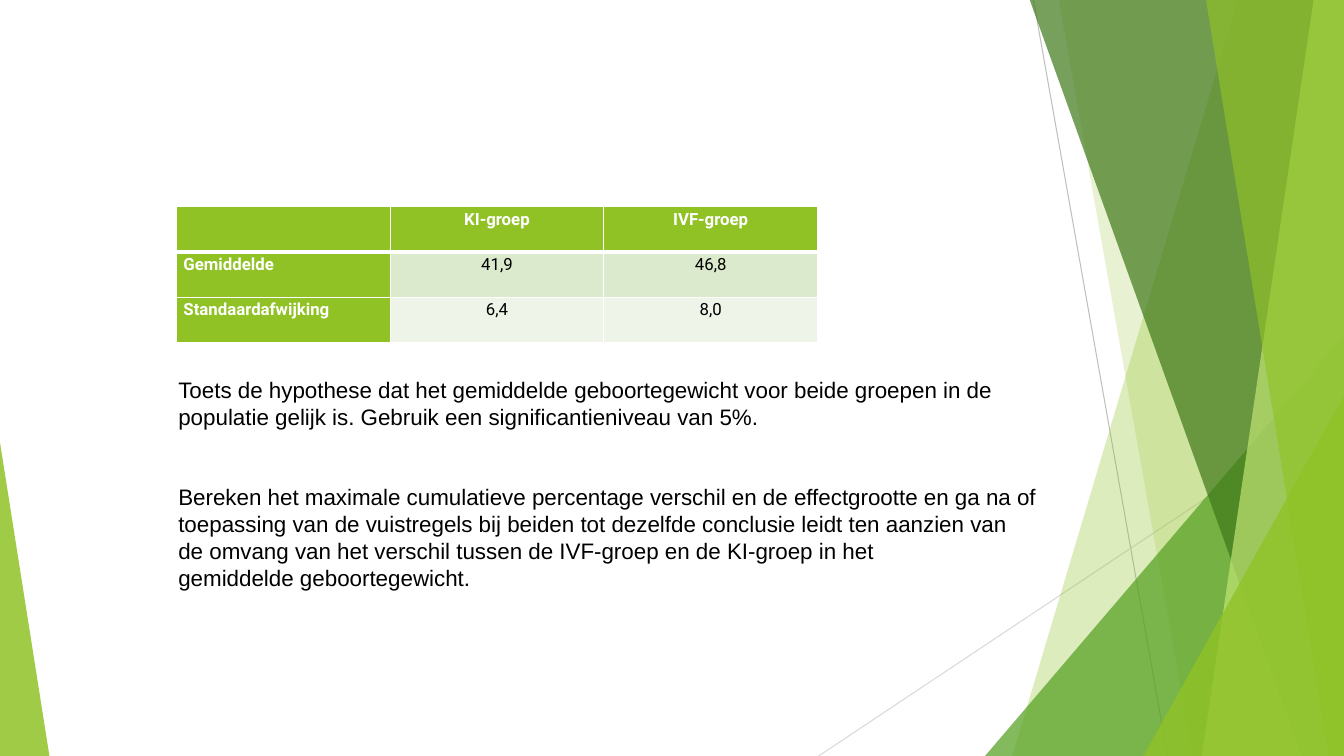
from dataclasses import dataclass

from lxml.etree import SubElement
from pptx import Presentation
from pptx.dml.color import RGBColor
from pptx.enum.shapes import MSO_CONNECTOR, MSO_SHAPE
from pptx.enum.text import MSO_ANCHOR, MSO_AUTO_SIZE, PP_ALIGN
from pptx.oxml.ns import qn
from pptx.util import Inches, Pt

WIDTH, HEIGHT = 13.33, 7.5


@dataclass(frozen=True)
class Theme:
    lime: str = "90C226"
    green: str = "54A021"
    forest: str = "3F7819"
    pale_lime: str = "C0E474"
    band_dark: str = "DBE9CD"
    band_light: str = "EEF4E8"
    line_dark: str = "BFBFBF"
    line_light: str = "D9D9D9"
    white: str = "FFFFFF"
    black: str = "000000"
    body_font: str = "Arial"
    table_font: str = "Roboto"
    body_size: int = 16
    table_size: int = 12


class SlideBuilder:
    def __init__(self, slide, theme):
        self.s = slide
        self.theme = theme

    def paint(self, sp, color, opacity):
        sp.shadow.inherit = False
        sp.line.fill.background()
        sp.fill.solid()
        sp.fill.fore_color.rgb = RGBColor.from_string(color)
        clr = sp.fill._xPr.find(qn("a:solidFill"))[0]
        SubElement(clr, qn("a:alpha"), val=str(opacity * 1000))

    def line(self, start, end, color):
        points = [Inches(v) for v in (*start, *end)]
        cx = self.s.shapes.add_connector(MSO_CONNECTOR.STRAIGHT, *points)
        cx.line.color.rgb = RGBColor.from_string(color)
        cx.line.width = Pt(0.75)
        SubElement(cx._element.spPr, qn("a:effectLst"))

    def veil(self, top_x, bottom_x, color, opacity):
        """Full-height band from a slanted left edge to the slide's right edge."""
        top = -0.01
        corners = [(WIDTH, top), (WIDTH, HEIGHT), (bottom_x, HEIGHT)]
        fb = self.s.shapes.build_freeform(Inches(top_x), Inches(top))
        fb.add_line_segments([(Inches(x), Inches(y)) for x, y in corners])
        self.paint(fb.convert_to_shape(), color, opacity)

    def triangle(self, left, top, width, apex, color, opacity):
        """Triangle that stands on the slide's bottom edge."""
        box = [Inches(v) for v in (left, top, width, HEIGHT - top)]
        sp = self.s.shapes.add_shape(MSO_SHAPE.ISOSCELES_TRIANGLE, *box)
        sp.adjustments[0] = apex
        self.paint(sp, color, opacity)

    def style(self, p, font, size, color, bold=False):
        for r in p.runs:
            r.font.name = font
            r.font.size = Pt(size)
            r.font.bold = bold
            r.font.color.rgb = RGBColor.from_string(color)

    def text(self, left, top, width, height, lines, anchor=MSO_ANCHOR.TOP):
        box = [Inches(v) for v in (left, top, width, height)]
        tf = self.s.shapes.add_textbox(*box).text_frame
        tf.word_wrap = True
        tf.auto_size = MSO_AUTO_SIZE.SHAPE_TO_FIT_TEXT
        tf.vertical_anchor = anchor
        tf.text = "\n".join(lines)
        for p in tf.paragraphs:
            self.style(p, self.theme.body_font, self.theme.body_size, self.theme.black)

    def borders(self, cell, widths):
        tc_pr = cell._tc.get_or_add_tcPr()
        for side, width in widths.items():
            ln = SubElement(tc_pr, qn(f"a:ln{side}"), w=str(Pt(width)))
            fill = SubElement(ln, qn("a:solidFill"))
            SubElement(fill, qn("a:srgbClr"), val=self.theme.white)

    def table(self, left, top, col_width, row_height, rows):
        t = self.theme
        n_rows, n_cols = len(rows), len(rows[0])
        table = self.s.shapes.add_table(
            n_rows, n_cols, Inches(left), Inches(top),
            Inches(col_width * n_cols), Inches(row_height * n_rows)).table
        for i, row in enumerate(rows):
            for j, value in enumerate(row):
                cell = table.cell(i, j)
                heading = i == 0 or j == 0
                # A thick rule separates the header from the body
                self.borders(cell, {"L": 1, "R": 1, "T": 3 if i == 1 else 1,
                                    "B": 3 if i == 0 else 1})
                band = t.band_dark if i % 2 else t.band_light
                cell.fill.solid()
                cell.fill.fore_color.rgb = RGBColor.from_string(t.lime if heading else band)
                cell.margin_left = cell.margin_right = Inches(0.07)
                cell.margin_top = cell.margin_bottom = 0
                p = cell.text_frame.paragraphs[0]
                p.text = value
                p.line_spacing = 1.15
                p.alignment = PP_ALIGN.CENTER if j else PP_ALIGN.LEFT
                self.style(p, t.table_font, t.table_size,
                           t.white if heading else t.black, heading)


def main():
    prs = Presentation()
    prs.slide_width, prs.slide_height = Inches(WIDTH), Inches(HEIGHT)
    theme = Theme()
    slide = SlideBuilder(prs.slides.add_slide(prs.slide_layouts[6]), theme)

    # Thin lines behind the facets
    slide.line((10.25, 0), (11.58, HEIGHT), theme.line_dark)
    slide.line((WIDTH, 4.03), (8.12, HEIGHT), theme.line_light)

    # Green facets
    slide.veil(12.28, 10.04, theme.lime, 30)
    slide.veil(10.5, 11.83, theme.lime, 20)
    slide.triangle(9.77, 3.33, 3.56, 1, theme.green, 72)
    slide.veil(10.21, 12.91, theme.forest, 70)
    slide.veil(13.03, 11.92, theme.pale_lime, 70)
    slide.veil(11.96, 13.18, theme.lime, 65)
    slide.triangle(11.34, 3.93, 1.99, 1, theme.lime, 80)
    slide.triangle(0, 4.39, 0.49, 0, theme.lime, 85)

    # Group statistics
    slide.table(1.75, 2.05, 2.12, 0.45, [
        ["", "KI-groep", "IVF-groep"],
        ["Gemiddelde", "41,9", "46,8"],
        ["Standaardafwijking", "6,4", "8,0"],
    ])

    # Assignments
    slide.text(1.67, 4.74, 9.95, 1.18, [
        "Bereken het maximale cumulatieve percentage verschil en de effectgrootte en ga na of",
        "toepassing van de vuistregels bij beiden tot dezelfde conclusie leidt ten aanzien van",
        "de omvang van het verschil tussen de IVF-groep en de KI-groep in het",
        "gemiddelde geboortegewicht.",
    ], MSO_ANCHOR.MIDDLE)
    slide.text(1.67, 3.68, 9.95, 0.94, [
        "Toets de hypothese dat het gemiddelde geboortegewicht voor beide groepen in de",
        "populatie gelijk is. Gebruik een significantieniveau van 5%.",
    ])

    prs.save("out.pptx")


if __name__ == "__main__":
    main()
